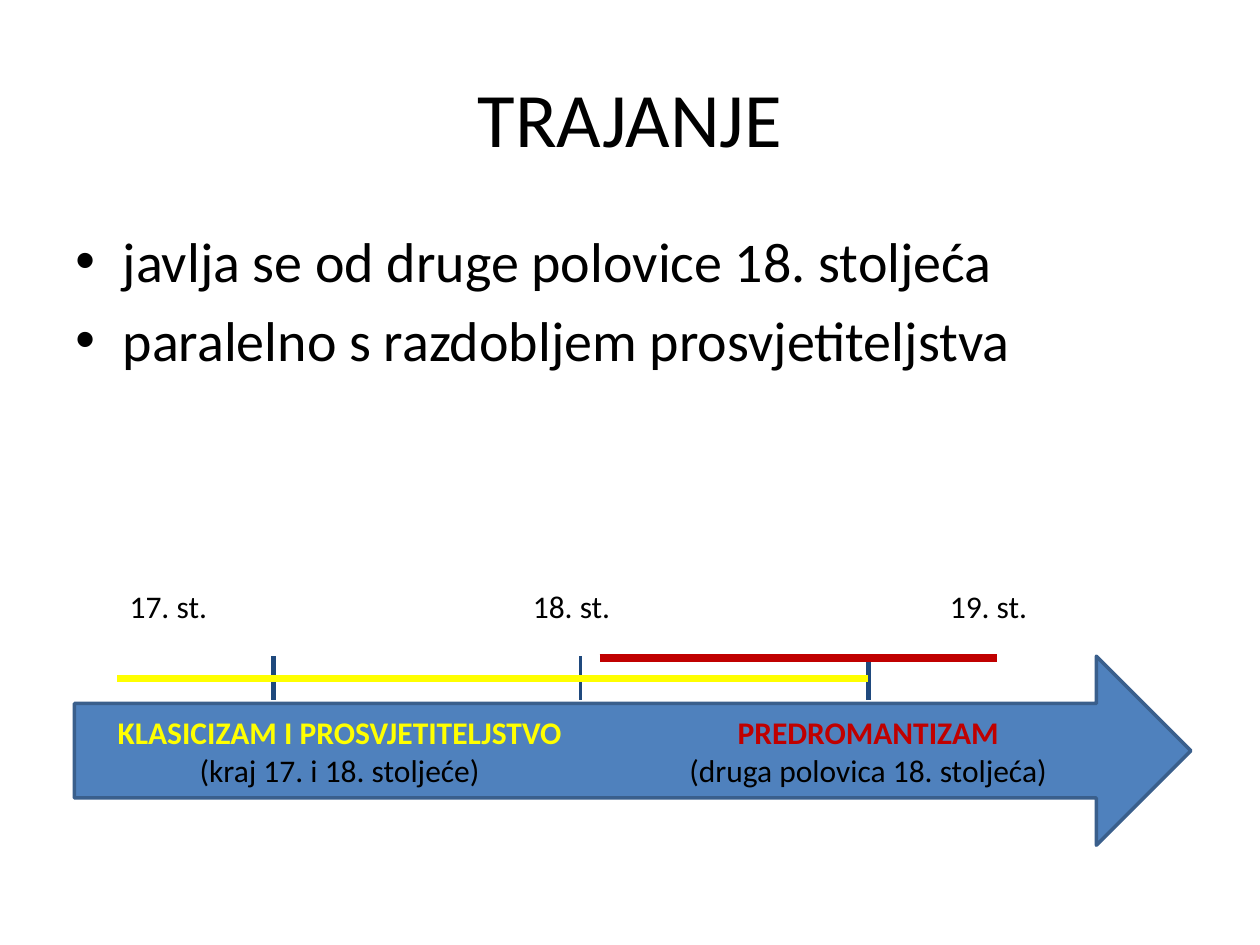
from lxml.etree import SubElement
from pptx import Presentation
from pptx.dml.color import RGBColor
from pptx.enum.shapes import MSO_CONNECTOR, MSO_SHAPE
from pptx.enum.text import MSO_ANCHOR, PP_ALIGN
from pptx.oxml.ns import qn
from pptx.util import Pt

FONT = "Calibri"
BLACK, YELLOW, RED = "000000", "FFFF00", "C00000"
BLUE, DARK_BLUE, OUTLINE = "4F81BD", "1F497D", "3A5F8C"


def color(hex_string):
    return RGBColor.from_string(hex_string)


def format_run(run, size, hex_string=BLACK, bold=False):
    run.font.name = FONT
    run.font.size = Pt(size)
    run.font.bold = bold
    run.font.color.rgb = color(hex_string)


def add_text_box(slide, left, top, width, height):
    shape = slide.shapes.add_textbox(Pt(left), Pt(top), Pt(width), Pt(height))
    shape.text_frame.word_wrap = True
    return shape.text_frame


def add_line(slide, start, end, hex_string, width):
    connector = slide.shapes.add_connector(
        MSO_CONNECTOR.STRAIGHT, *(Pt(value) for value in (*start, *end)))
    connector.line.color.rgb = color(hex_string)
    connector.line.width = Pt(width)
    SubElement(connector._element.spPr, qn("a:effectLst"))


def add_title(slide, left, top, width, height, text):
    text_frame = add_text_box(slide, left, top, width, height)
    text_frame.vertical_anchor = MSO_ANCHOR.MIDDLE
    text_frame.text = text
    paragraph = text_frame.paragraphs[0]
    paragraph.alignment = PP_ALIGN.CENTER
    format_run(paragraph.runs[0], 44)


def add_bullets(slide, left, top, width, height, items):
    text_frame = add_text_box(slide, left, top, width, height)
    text_frame.text = "\n".join(items)
    for paragraph in text_frame.paragraphs:
        paragraph.space_before = Pt(6.4)
        format_run(paragraph.runs[0], 32)
        properties = paragraph._p.get_or_add_pPr()
        properties.set("marL", str(Pt(27)))
        properties.set("indent", str(-Pt(27)))
        SubElement(properties, qn("a:buFont")).set("typeface", "Arial")
        SubElement(properties, qn("a:buChar")).set("char", "•")


def add_century(slide, left, top, text):
    text_frame = add_text_box(slide, left, top, 67.7, 29)
    text_frame.text = text
    format_run(text_frame.paragraphs[0].runs[0], 18)


def add_period(slide, left, top, width, name, years, hex_string):
    """Bold coloured name with its years on a second line."""
    text_frame = add_text_box(slide, left, top, width, 51)
    paragraph = text_frame.paragraphs[0]
    paragraph.alignment = PP_ALIGN.CENTER
    name_run = paragraph.add_run()
    name_run.text = name
    format_run(name_run, 18, hex_string, bold=True)
    paragraph.add_line_break()
    years_run = paragraph.add_run()
    years_run.text = years
    format_run(years_run, 18)


def add_timeline(slide, left, top, width, height):
    arrow_top = top + 43
    arrow = slide.shapes.add_shape(
        MSO_SHAPE.RIGHT_ARROW, Pt(left), Pt(arrow_top), Pt(width), Pt(height - 43))
    arrow.shadow.inherit = False
    arrow.fill.solid()
    arrow.fill.fore_color.rgb = color(BLUE)
    arrow.line.color.rgb = color(OUTLINE)
    arrow.line.width = Pt(2)

    for x, line_width in ((113.7, 3), (453.6, 3), (289.4, 1.5)):
        add_line(slide, (left + x, arrow_top), (left + x, arrow_top + 25),
                 DARK_BLUE, line_width)
    for x, text in ((24.5, "17. st."), (254.9, "18. st."), (493.2, "19. st.")):
        add_century(slide, left + x, top, text)

    spans = ((24.5, 453.6, 12.7, YELLOW), (300.2, 527, 0.8, RED))
    for start, end, y, hex_string in spans:
        add_line(slide, (left + start, arrow_top + y), (left + end, arrow_top + y),
                 hex_string, 4.5)

    periods = (
        (13.7, 275.8, "KLASICIZAM I PROSVJETITELJSTVO", "(kraj 17. i 18. stoljeće)", YELLOW),
        (335.5, 236.2, "PREDROMANTIZAM", "(druga polovica 18. stoljeća)", RED),
    )
    for x, period_width, name, years, hex_string in periods:
        add_period(slide, left + x, arrow_top + 28.9, period_width, name, years, hex_string)


def main():
    presentation = Presentation()
    presentation.slide_width, presentation.slide_height = Pt(720), Pt(540)
    slide = presentation.slides.add_slide(presentation.slide_layouts[6])
    add_title(slide, 36, 21.6, 648, 90, "TRAJANJE")
    add_bullets(slide, 36, 126, 648, 356.4, (
        "javlja se od druge polovice 18. stoljeća",
        "paralelno s razdobljem prosvjetiteljstva",
    ))
    add_timeline(slide, 42.5, 332, 638, 151)
    presentation.save("out.pptx")


if __name__ == "__main__":
    main()
